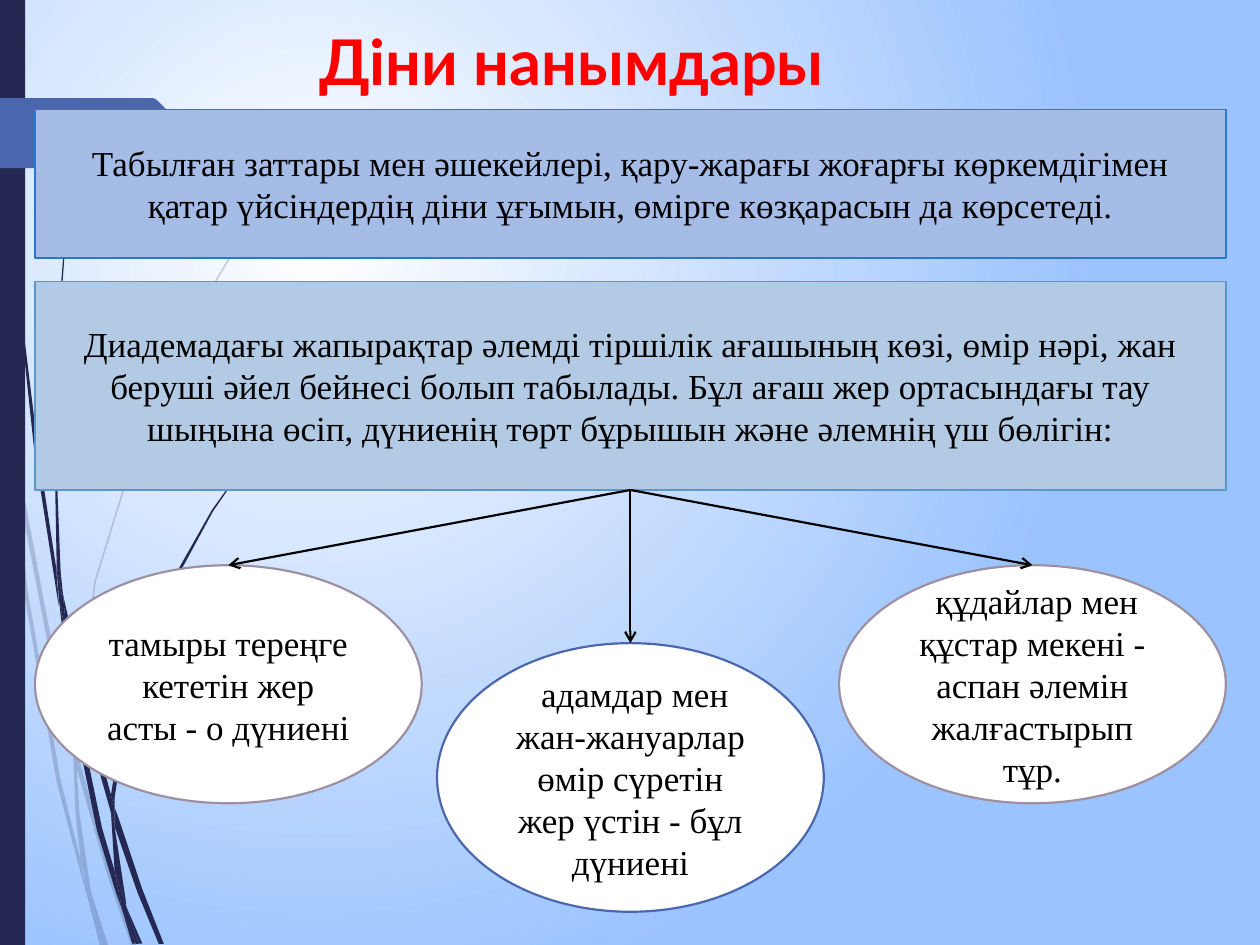
from typing import NamedTuple

from lxml import etree
from pptx import Presentation
from pptx.dml.color import RGBColor
from pptx.enum.shapes import MSO_CONNECTOR, MSO_SHAPE
from pptx.enum.text import MSO_ANCHOR, PP_ALIGN
from pptx.oxml.ns import qn
from pptx.util import Pt

RECT, OVAL = MSO_SHAPE.RECTANGLE, MSO_SHAPE.OVAL
STRAIGHT = MSO_CONNECTOR.STRAIGHT
LEFT, CENTER = PP_ALIGN.LEFT, PP_ALIGN.CENTER
TOP, MIDDLE = MSO_ANCHOR.TOP, MSO_ANCHOR.MIDDLE

WHITE = RGBColor(0xFF, 0xFF, 0xFF)
BLACK = RGBColor(0, 0, 0)
RED = RGBColor(0xFF, 0, 0)
SKY = RGBColor(0x9B, 0xC3, 0xFE)
NAVY = RGBColor(0x24, 0x28, 0x52)
BLUE = RGBColor(0x4A, 0x66, 0xAC)
MAUVE = RGBColor(0x9D, 0x90, 0xA0)
PERIWINKLE = RGBColor(0xA5, 0xBC, 0xE6)
PALE_BLUE = RGBColor(0xB3, 0xCA, 0xE4)
EDGE_BLUE = RGBColor(0x27, 0x79, 0xCB)
EDGE_PALE = RGBColor(0x5E, 0x96, 0xC8)

Points = list[tuple[float, float]]


class Panel(NamedTuple):
    kind: int
    left: float
    top: float
    width: float
    height: float
    fill: RGBColor
    edge: RGBColor
    edge_width: float
    text: str


MARGIN, FULL_W = 20, 680.5
OVAL_W = 221
OVAL_STEP = (FULL_W - OVAL_W) / 2

STATEMENTS = [
    Panel(RECT, MARGIN, 62.5, FULL_W, 85, PERIWINKLE, EDGE_BLUE, 0.75,
          "Табылған заттары мен əшекейлері, қару-жарағы жоғарғы көркемдігімен "
          "қатар үйсіндердің діни ұғымын, өмірге көзқарасын да көрсетеді."),
    Panel(RECT, MARGIN, 161, FULL_W, 119, PALE_BLUE, EDGE_PALE, 0.75,
          "Диадемадағы жапырақтар əлемді тіршілік ағашының көзі, өмір нəрі, жан "
          "беруші əйел бейнесі болып табылады. Бұл ағаш жер ортасындағы тау "
          "шыңына өсіп, дүниенің төрт бұрышын жəне əлемнің үш бөлігін:"),
]
WORLDS = [
    Panel(OVAL, MARGIN + i * OVAL_STEP, top, OVAL_W, height, WHITE, edge, 1.25, text)
    for i, (top, height, edge, text) in enumerate([
        (323, 136, MAUVE, "тамыры тереңге кететін жер асты - о дүниені"),
        (367.5, 153.5, BLUE,
         " адамдар мен жан-жануарлар өмір сүретін жер үстін - бұл дүниені"),
        (323, 136, MAUVE,
         " құдайлар мен құстар мекені - аспан əлемін жалғастырып тұр."),
    ])
]

PALE_WISPS: list[Points] = [
    [(5.8, 252), (4.3, 231.8), (0, 203), (0, 215.3), (5, 247.7)],
    [(28.8, 375.8), (42.5, 431.3), (42.5, 421.9), (31, 374.4), (7.2, 248.4),
     (8.6, 270.7)],
    [(46.1, 437), (43.9, 429.1), (43.9, 439.2), (61.2, 499.7), (74.9, 540),
     (77.8, 540), (63.4, 498.2)],
    [(59.8, 540), (61.9, 540), (52.6, 511.9)],
    [(46.1, 491.8), (34.6, 445.7), (15.8, 337.7), (8.6, 270.7), (5.8, 252),
     (13.7, 338.4), (32.4, 447.1), (46.1, 499), (50.4, 514.1), (49.7, 509)],
    [(41.8, 431.3), (43.2, 465.1), (46.1, 491.8), (48.2, 498.2), (52.6, 511.9),
     (51.8, 508.3), (45.4, 465.1), (43.9, 439.2), (43.9, 437.8)],
    [(43.9, 420.5), (54.7, 332.6), (79.9, 251.3), (114.5, 176.4), (134.6, 142.6),
     (144.7, 126), (156.2, 110.9), (156.2, 110.2), (144.7, 126), (133.9, 141.8),
     (113.8, 175.7), (79.2, 250.6), (54, 331.9), (42.5, 420.5), (42.5, 421.9),
     (43.9, 429.1)],
    [(50.4, 514.1), (56.9, 540), (59, 540)],
    [(43.9, 437.8), (43.9, 439.2), (43.9, 429.1), (42.5, 421.9), (41.8, 431.3)],
    [(48.2, 498.2), (46.8, 491.8), (49.7, 509), (50.4, 514.1), (59, 540),
     (59.8, 540), (52.6, 511.9)],
]
DARK_WISPS: list[Points] = [
    [(3.6, 79.2), (10.1, 167.8), (19.4, 255.6), (33.1, 343.4), (33.8, 346.3),
     (32.4, 329), (32.4, 326.2), (21.6, 255.6), (10.8, 167), (4.3, 78.5),
     (2.9, 34.6), (2.2, 0), (1.4, 0), (2.2, 34.6)],
    [(52.6, 426.2), (63.4, 464.4), (63.4, 454.3), (55.4, 424.8), (36, 339.8),
     (38.2, 363.6)],
    [(67.7, 467.3), (65.5, 461.5), (65.5, 472.3), (78.5, 509.8), (90.7, 539.3),
     (93.6, 539.3), (81.4, 508.3)],
    [(65.5, 497.5), (58.3, 473), (43.2, 400.3), (38.2, 363.6), (33.8, 343.4),
     (40.3, 401), (55.4, 474.5), (66.2, 509.8), (69.8, 519.8), (69.1, 516.2)],
    [(36, 339.8), (34.6, 326.2), (31.7, 251.3), (34.6, 176.4), (37.4, 139),
     (41.8, 101.5), (36.7, 139), (33.8, 176.4), (31, 251.3), (32.4, 323.3),
     (35.3, 339.8)],
    [(79.2, 539.3), (81.4, 539.3), (72, 517.7)],
    [(33.8, 343.4), (38.2, 363.6), (36, 339.8), (35.3, 339.8), (32.4, 323.3),
     (32.4, 326.2)],
    [(65.5, 455.8), (74.2, 397.4), (94.3, 342.7), (121.7, 292.3), (137.5, 269.3),
     (146.2, 258.5), (155.5, 247.7), (154.8, 247.7), (146.2, 257.8),
     (137.5, 268.6), (121, 291.6), (92.9, 341.3), (72.7, 396.7), (63.4, 454.3),
     (65.5, 461.5)],
    [(69.8, 519.8), (75.6, 539.3), (77.8, 539.3)],
    [(63.4, 464.4), (65.5, 497.5), (69.1, 508.3), (72, 517.7), (72, 515.5),
     (65.5, 472.3), (64.8, 468.7)],
    [(63.4, 464.4), (64.8, 468.7), (65.5, 472.3), (65.5, 461.5), (63.4, 454.3)],
    [(69.1, 508.3), (65.5, 497.5), (69.1, 516.2), (69.8, 519.8), (77.8, 539.3),
     (79.2, 539.3), (72, 517.7)],
]
TAB: Points = [(0, 56), (87.5, 56), (89.5, 57), (107, 74.5), (107.5, 76),
               (107, 77.5), (89.5, 95), (87.5, 96), (0, 96)]


def write(tf, text: str, *, size: float, font: str, color: RGBColor,
          bold: bool = False, align=CENTER, anchor=MIDDLE) -> None:
    tf.word_wrap = True
    tf.vertical_anchor = anchor
    p = tf.paragraphs[0]
    p.alignment = align
    r = p.add_run()
    r.text = text
    r.font.size, r.font.name, r.font.bold = Pt(size), font, bold
    r.font.color.rgb = color


def paint(sp, color: RGBColor, opacity: int = 100) -> None:
    sp.shadow.inherit = False
    sp.fill.solid()
    sp.fill.fore_color.rgb = color
    sp.line.fill.background()
    if opacity < 100:
        rgb = sp._element.spPr.find(qn("a:solidFill")).find(qn("a:srgbClr"))
        etree.SubElement(rgb, qn("a:alpha"), val=str(opacity * 1000))


def add_outline(s, points: Points, color: RGBColor, opacity: int = 100) -> None:
    start, *rest = [(Pt(x), Pt(y)) for x, y in points]
    builder = s.shapes.build_freeform(*start)
    builder.add_line_segments(rest, close=True)
    paint(builder.convert_to_shape(), color, opacity)


def add_panel(s, panel: Panel):
    sp = s.shapes.add_shape(panel.kind, Pt(panel.left), Pt(panel.top),
                            Pt(panel.width), Pt(panel.height))
    paint(sp, panel.fill)
    sp.line.color.rgb = panel.edge
    sp.line.width = Pt(panel.edge_width)
    write(sp.text_frame, panel.text, size=20, font="Times New Roman", color=BLACK)
    return sp


def add_arrow(s, source, target) -> None:
    """Join the bottom of source to the top of target."""
    line = s.shapes.add_connector(STRAIGHT, 0, 0, 0, 0)
    line.begin_connect(source, 2)
    line.end_connect(target, 0)
    line.line.color.rgb = BLACK
    line.line.width = Pt(1.25)
    etree.SubElement(line.line._get_or_add_ln(), qn("a:tailEnd"), type="arrow")
    etree.SubElement(line._element.spPr, qn("a:effectLst"))


def set_background(s) -> None:
    """Radial gradient centred a quarter of the way in from the top left."""
    fill = s.background.fill
    fill.gradient()
    for stop, color in zip(fill.gradient_stops, (WHITE, SKY)):
        stop.color.rgb = color
    grad = s._element.cSld.find(".//" + qn("a:gradFill"))
    grad.remove(grad.find(qn("a:lin")))
    radial = etree.SubElement(grad, qn("a:path"), path="circle")
    etree.SubElement(radial, qn("a:fillToRect"),
                     l="50000", t="50000", r="100000", b="100000")


def main() -> None:
    prs = Presentation()
    prs.slide_width, prs.slide_height = Pt(720), Pt(540)
    s = prs.slides.add_slide(prs.slide_layouts[5])
    set_background(s)
    for wisp in PALE_WISPS:
        add_outline(s, wisp, NAVY, 20)
    for wisp in DARK_WISPS:
        add_outline(s, wisp, NAVY)
    paint(s.shapes.add_shape(RECT, 0, 0, Pt(14.4), Pt(540)), NAVY)
    add_outline(s, TAB, BLUE)

    title = s.shapes.title
    title.left, title.top, title.width, title.height = Pt(175.5), Pt(9.5), Pt(369.5), Pt(51)
    write(title.text_frame, "Діни нанымдары", size=36, font="Lato", color=RED,
          bold=True, align=LEFT, anchor=TOP)

    _, tree = [add_panel(s, panel) for panel in STATEMENTS]
    for world in [add_panel(s, panel) for panel in WORLDS]:
        add_arrow(s, tree, world)
    prs.save("out.pptx")


if __name__ == "__main__":
    main()
